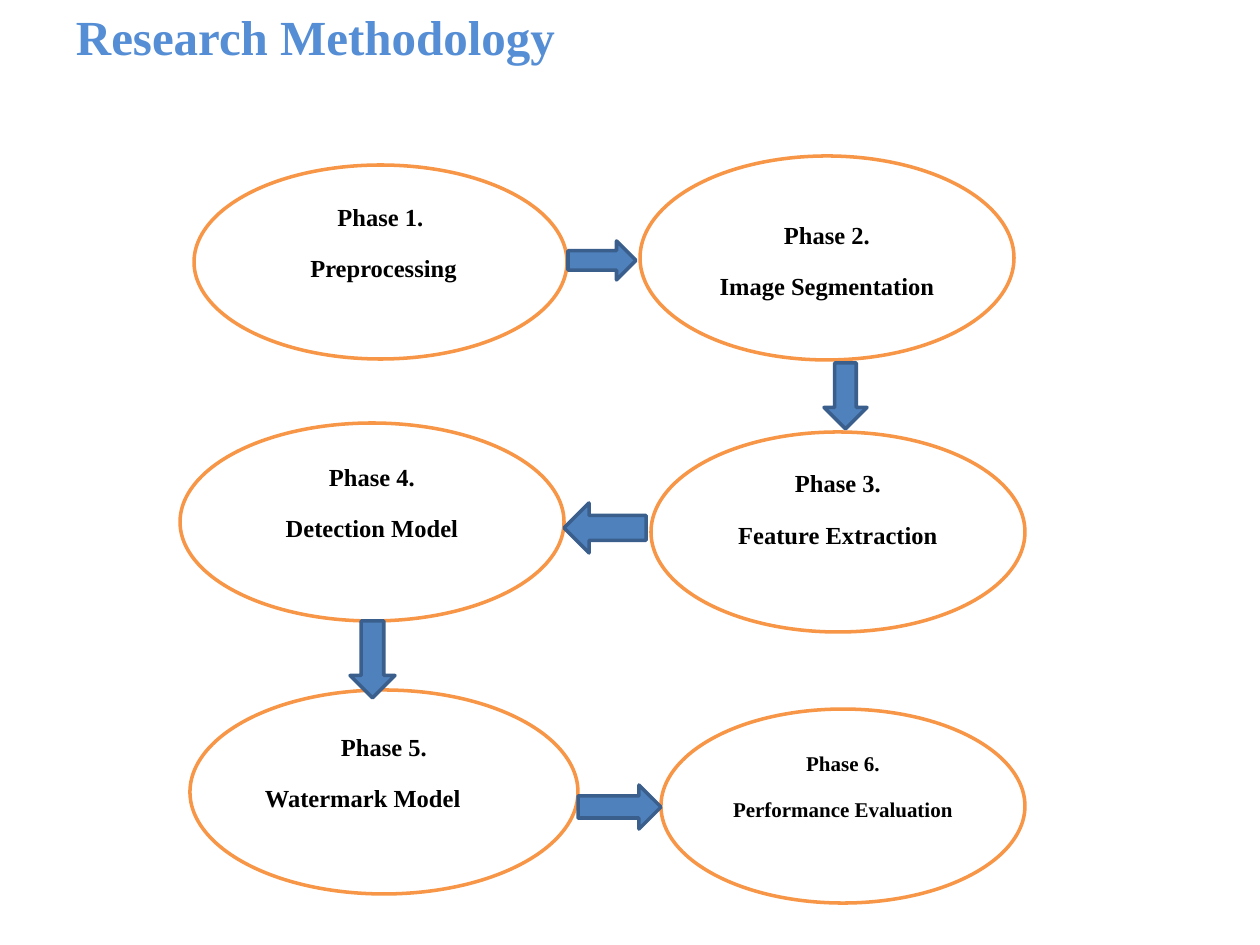
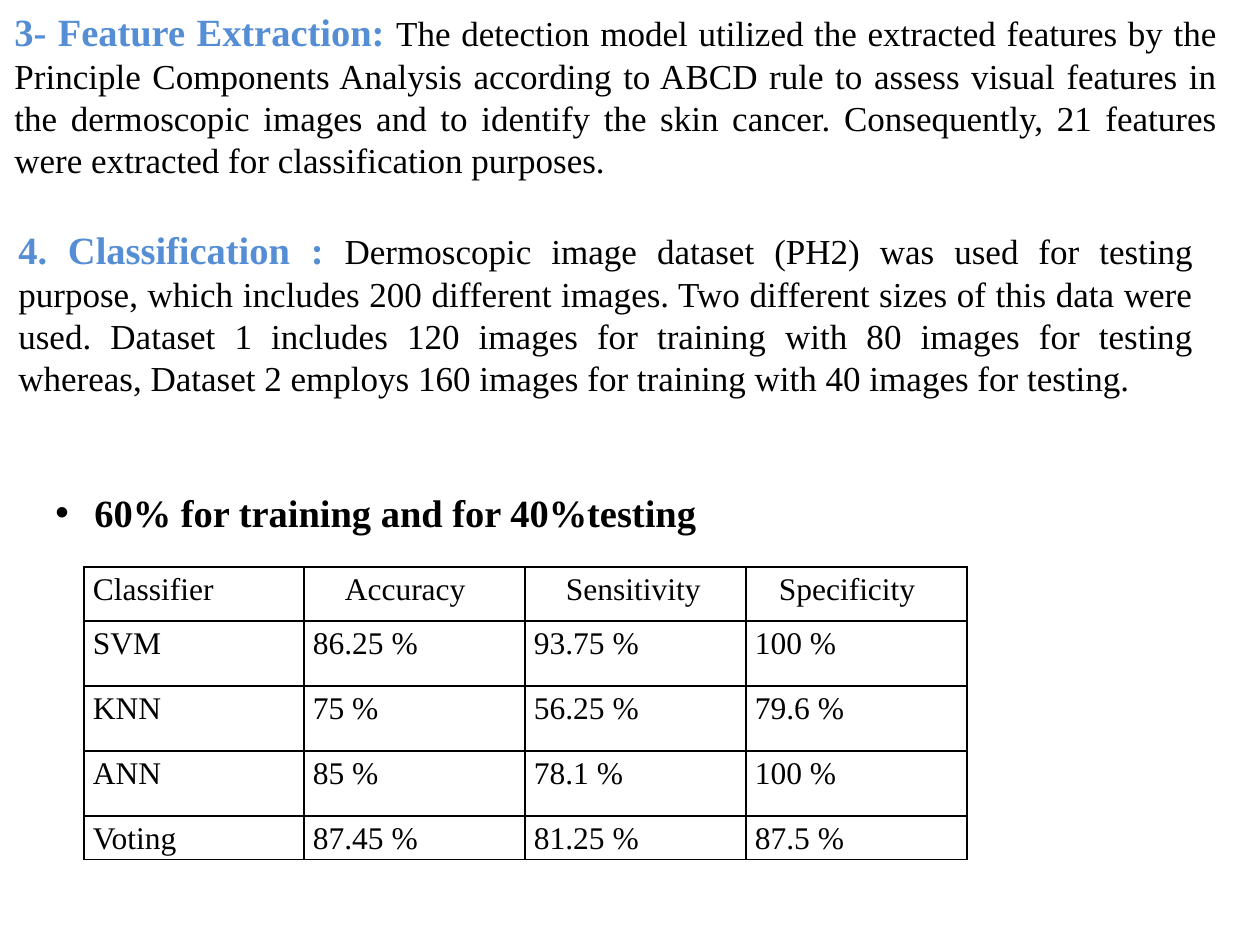
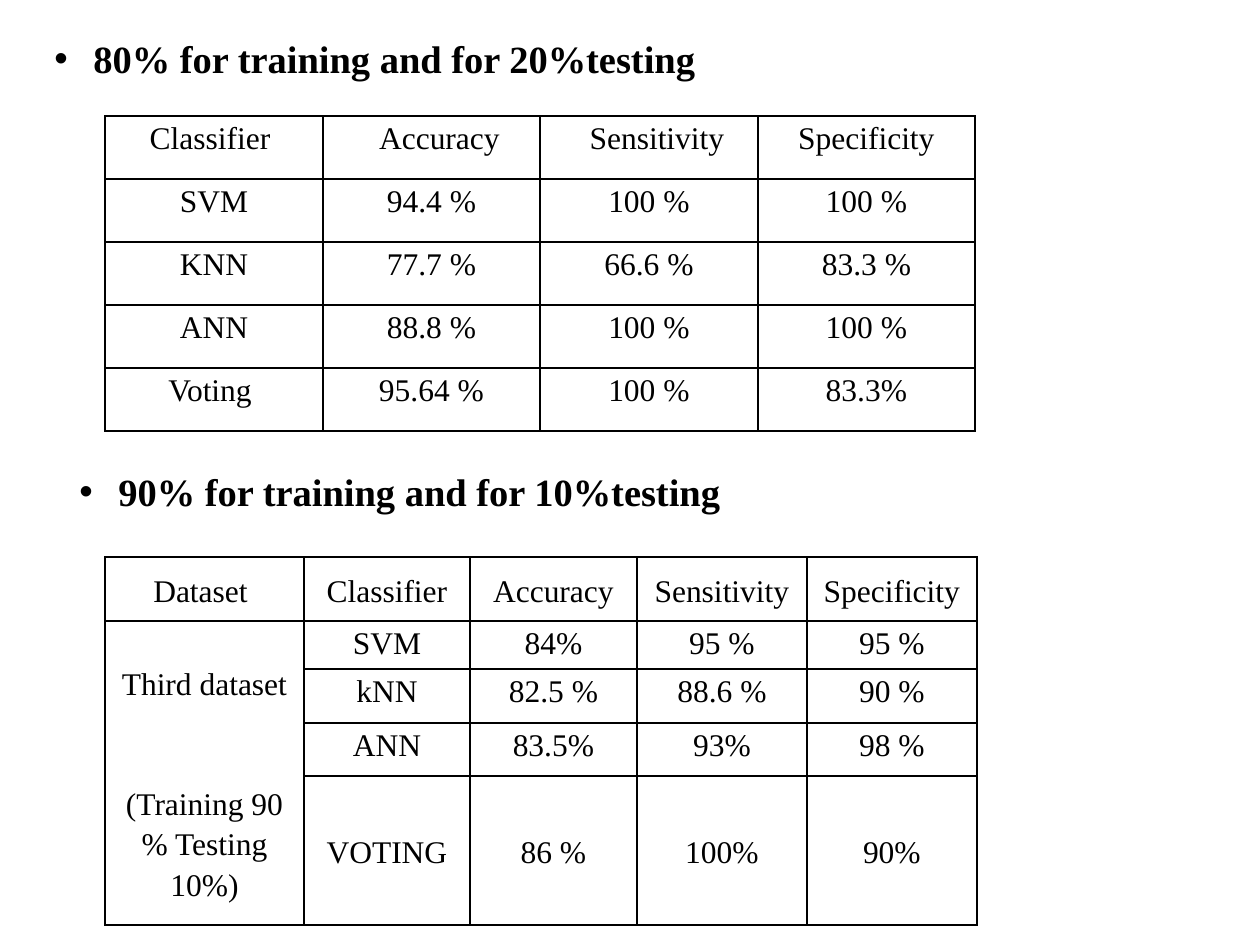
from lxml import etree
from pptx import Presentation
from pptx.dml.color import RGBColor
from pptx.enum.shapes import MSO_SHAPE as SHAPE
from pptx.enum.text import MSO_ANCHOR as ANCHOR, PP_ALIGN as ALIGN
from pptx.oxml.ns import qn
from pptx.util import Emu, Pt

# Shared look
SERIF = "Times New Roman"
HEADING, BLACK, WHITE = "558ED5", "000000", "FFFFFF"
ORANGE, ARROW_FILL, ARROW_LINE = "F79646", "4F81BD", "3A5F8C"
PAD = 9  # side inset of table cells, px

# Slide 1: (box, lines, size, alignment of second line, bottom inset)
PHASES = [
    ((194, 165, 373, 194), ["Phase 1.", " Preprocessing"], 14, ALIGN.CENTER, 44),
    ((640, 156, 374, 204), ["Phase 2.", "Image Segmentation"], 14, ALIGN.CENTER, 0),
    ((651, 432, 374, 200), ["Phase 3.", "Feature Extraction"], 14, ALIGN.CENTER, 51),
    ((180, 423, 384, 198), ["Phase 4.", "Detection Model"], 14, ALIGN.CENTER, 44),
    ((190, 690, 388, 204), ["Phase 5.", " Watermark Model"], 14, ALIGN.LEFT, 44),
    ((661, 709, 364, 194), ["Phase 6.", "Performance Evaluation"], 12, ALIGN.CENTER, 44),
]
ARROWS = [
    (SHAPE.RIGHT_ARROW, (568, 241, 68, 39)),
    (SHAPE.DOWN_ARROW, (824, 363, 43, 66)),
    (SHAPE.LEFT_ARROW, (564, 503, 82, 50)),
    (SHAPE.DOWN_ARROW, (350, 621, 45, 77)),
    (SHAPE.RIGHT_ARROW, (578, 785, 83, 44)),
]

# Slide 2: (box, heading, body)
SECTIONS = [
    ((2, 2, 1228, 271), "3- Feature Extraction: ",
     "The detection model utilized the extracted features by the Principle "
     "Components Analysis according to ABCD rule to assess visual features in the "
     "dermoscopic images and to identify the skin cancer. Consequently, 21 features "
     "were extracted for classification purposes."),
    ((6, 220, 1200, 187), "4. Classification : ",
     "Dermoscopic image dataset (PH2) was used for testing purpose, which includes "
     "200 different images. Two different sizes of this data were used. Dataset 1 "
     "includes 120 images for training with 80 images for testing whereas, Dataset 2 "
     "employs 160 images for training with 40 images for testing."),
]
SPLIT_60 = [
    ["Classifier", "Accuracy", "Sensitivity", "Specificity"],
    ["SVM", "86.25 %", "93.75 %", "100 %"],
    ["KNN", "75 %", "56.25 %", "79.6 %"],
    ["ANN", "85 %", "78.1 %", "100 %"],
    ["Voting", "87.45 %", "81.25 %", "87.5 %"],
]

# Slide 3
SPLIT_80 = [
    ["Classifier ", "Accuracy", "Sensitivity", "Specificity"],
    ["SVM", "94.4 %", "100 %", "100 %"],
    ["KNN", "77.7 %", "66.6 %", "83.3 %"],
    ["ANN", "88.8 %", "100 %", "100 %"],
    ["Voting ", "95.64 %", "100 %", "83.3%"],
]
SPLIT_90 = [
    ["Dataset ", "Classifier", "Accuracy", "Sensitivity", "Specificity"],
    ["Third dataset\n(Training 90 % Testing 10%)", "SVM", "84%", "95 %", "95 %"],
    ["", "kNN", "82.5 %", "88.6 %", "90 %"],
    ["", "ANN", "83.5%", "93%", "98 %"],
    ["", "VOTING", "86 %", "100%", "90%"],
]


def px(length):
    return Emu(round(length * 914400 / 126))


def rgb(color):
    return RGBColor.from_string(color)


def style(font, size, color=BLACK, bold=False):
    font.name, font.size, font.bold = SERIF, Pt(size), bold
    font.color.rgb = rgb(color)


def add_text(page, box):
    frame = page.shapes.add_textbox(*map(px, box)).text_frame
    frame.word_wrap = True
    return frame


def add_figure(page, kind, box, fill, line):
    shape = page.shapes.add_shape(kind, *map(px, box))
    shape.shadow.inherit = False
    shape.fill.solid()
    shape.fill.fore_color.rgb = rgb(fill)
    shape.line.color.rgb = rgb(line)
    shape.line.width = Pt(2)
    return shape


def add_phase(page, box, lines, size, second_align, bottom):
    frame = add_figure(page, SHAPE.OVAL, box, WHITE, ORANGE).text_frame
    frame.word_wrap = True
    frame.vertical_anchor = ANCHOR.MIDDLE
    frame.margin_top, frame.margin_bottom = 0, px(bottom)
    frame.text = "\n".join(lines)
    for para, align in zip(frame.paragraphs, (ALIGN.CENTER, second_align)):
        para.alignment = align
        para.line_spacing, para.space_after = 1.15, Pt(10)
        style(para.font, size, bold=True)


def add_section(page, box, heading, body):
    para = add_text(page, box).paragraphs[0]
    para.alignment = ALIGN.JUSTIFY
    for text, size, color, bold in ((heading, 22, HEADING, True),
                                    (body, 20, BLACK, False)):
        span = para.add_run()
        span.text = text
        style(span.font, size, color, bold)


def add_bullet(page, left, top, text):
    para = add_text(page, (left, top, 674, 59)).paragraphs[0]
    para.text = text
    style(para.font, 22, bold=True)
    props = para._p.get_or_add_pPr()
    props.set("marL", str(px(39)))
    props.set("indent", str(-px(39)))
    etree.SubElement(props, qn("a:buFont")).set("typeface", "Arial")
    etree.SubElement(props, qn("a:buChar")).set("char", "•")
    props.append(props.find(qn("a:defRPr")))  # bullets must precede the font


def add_borders(cell):
    props = cell._tc.get_or_add_tcPr()
    for index, side in enumerate(("a:lnL", "a:lnR", "a:lnT", "a:lnB")):
        line = etree.Element(qn(side), w=str(Pt(1)))
        fill = etree.SubElement(line, qn("a:solidFill"))
        etree.SubElement(fill, qn("a:srgbClr")).set("val", BLACK)
        props.insert(index, line)


def add_grid(page, left, top, widths, heights, rows, align):
    table = page.shapes.add_table(len(rows), len(widths), px(left), px(top),
                                  px(sum(widths)), px(sum(heights))).table
    table.first_row = table.horz_banding = False
    for column, width in zip(table.columns, widths):
        column.width = px(width)
    for row, height, texts in zip(table.rows, heights, rows):
        row.height = px(height)
        for cell, text in zip(row.cells, texts):
            cell.margin_left = cell.margin_right = px(PAD)
            cell.margin_top = cell.margin_bottom = 0
            cell.fill.background()
            add_borders(cell)
            cell.text = text
            for para in cell.text_frame.paragraphs:
                para.alignment, para.line_spacing = align, 1.15
                style(para.font, 18)
    return table


def indent_header(table, shifts):
    for cell, shift in zip(table.rows[0].cells, shifts):
        cell.margin_left = px(PAD + shift)


def build_methodology(page):
    frame = add_text(page, (0, 0, 1270, 72))
    frame.margin_left = px(76)
    title = frame.paragraphs[0]
    title.text = "Research Methodology"
    style(title.font, 28, HEADING, True)
    for phase in PHASES:
        add_phase(page, *phase)
    for kind, box in ARROWS:
        add_figure(page, kind, box, ARROW_FILL, ARROW_LINE)


def build_classification(page):
    for section in SECTIONS:
        add_section(page, *section)
    add_bullet(page, 43, 483, "60% for training and for 40%testing")
    table = add_grid(page, 84, 567, [220] + [221] * 3, [54, 65, 65, 65, 43],
                     SPLIT_60, ALIGN.LEFT)
    indent_header(table, (0, 32, 32, 24))


def build_results(page):
    add_bullet(page, 42, 29, "80% for training and for 20%testing")
    table = add_grid(page, 105, 116, [218, 217] * 2, [63] * 5, SPLIT_80, ALIGN.CENTER)
    indent_header(table, (0, 16, 16, 0))

    add_bullet(page, 67, 462, "90% for training and for 10%testing")
    table = add_grid(page, 105, 557, [199, 166, 167, 170, 170],
                     [64, 48, 54, 53, 149], SPLIT_90, ALIGN.CENTER)
    for row in (0, 4):
        for cell in table.rows[row].cells:
            cell.vertical_anchor = ANCHOR.MIDDLE
    # The dataset label spans all four classifiers
    dataset = table.cell(1, 0)
    dataset.merge(table.cell(4, 0))
    dataset.margin_top = px(41)
    dataset.text_frame.paragraphs[1].space_before = Pt(46)


def main():
    deck = Presentation()
    deck.slide_width, deck.slide_height = px(1260), px(945)
    for build in (build_methodology, build_classification, build_results):
        build(deck.slides.add_slide(deck.slide_layouts[6]))
    deck.save("out.pptx")


if __name__ == "__main__":
    main()
